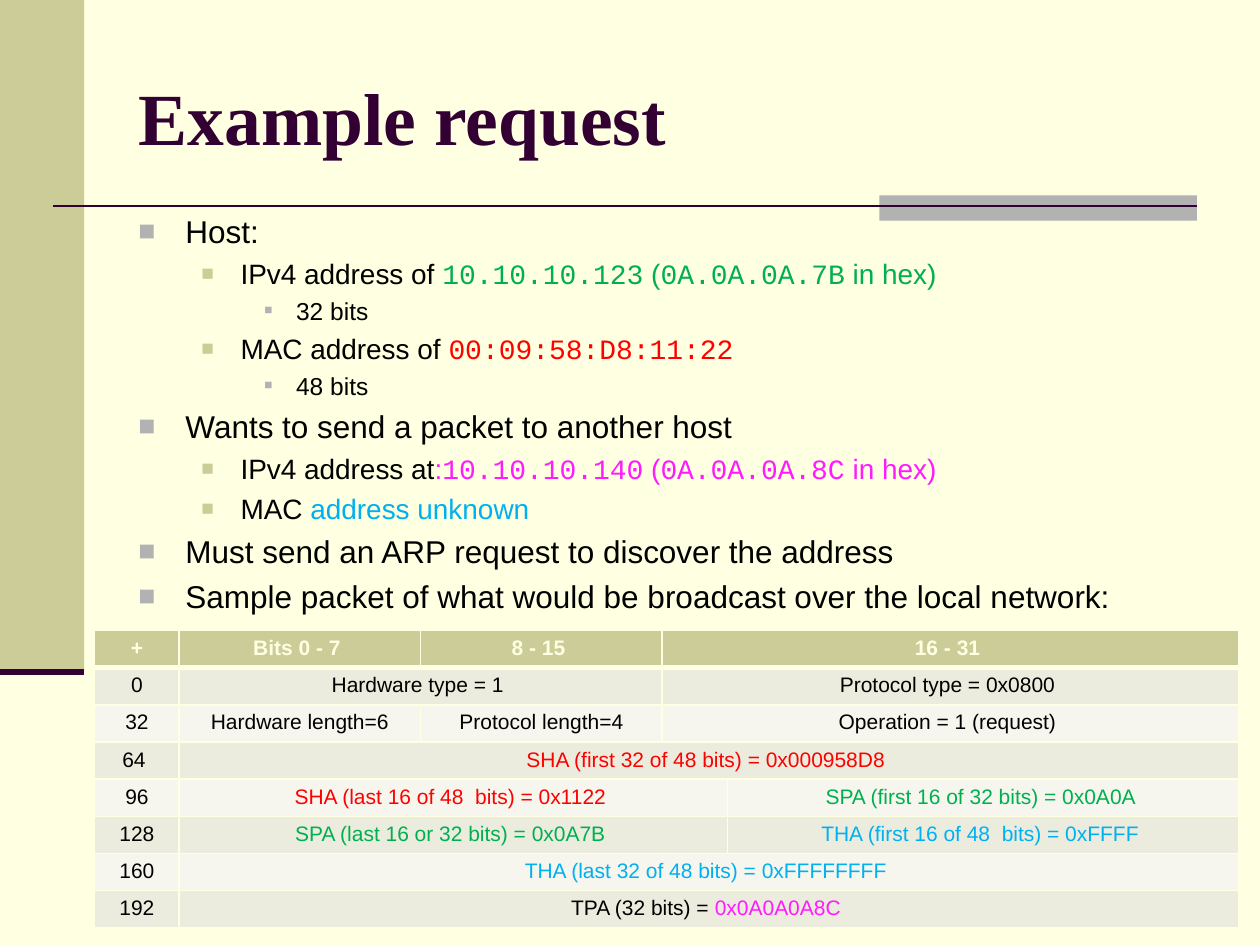
from dataclasses import dataclass

from lxml.etree import SubElement
from pptx import Presentation
from pptx.dml.color import RGBColor
from pptx.enum.shapes import MSO_CONNECTOR, MSO_SHAPE
from pptx.enum.text import MSO_ANCHOR, MSO_AUTO_SIZE, PP_ALIGN
from pptx.oxml import parse_xml
from pptx.oxml.ns import nsdecls, qn
from pptx.util import Cm, Pt


@dataclass(frozen=True)
class Theme:
    page: str = "FFFFE1"
    dark: str = "330033"
    olive: str = "CCCC99"
    gray: str = "B2B2B2"
    ink: str = "000000"
    green: str = "00B050"
    red: str = "FF0000"
    pink: str = "FF1AFF"
    blue: str = "00B0F0"
    bands: tuple = ("F6F6EF", "ECECDE")
    serif: str = "Times New Roman"
    sans: str = "Arial"
    mono: str = "Courier New"
    title: int = 42
    cell: int = 12


T = Theme()

# Per level: type size, left margin (cm), hanging indent (cm), bullet colour, bullet %
LEVELS = [
    (18, 0.95, 0.95, T.gray, 90),
    (16, 2.06, 0.79, T.olive, 75),
    (14, 3.18, 0.64, T.gray, 55),
]

# Level, then runs of (text, colour, font)
POINTS = [
    (0, [("Host:",)]),
    (1, [("IPv4 address of ",), ("10.10.10.123", T.green, T.mono), (" (", T.green),
         ("0A.0A.0A.7B", T.green, T.mono), (" in hex)", T.green)]),
    (2, [("32 bits",)]),
    (1, [("MAC address of ",), ("00:09:58:D8:11:22", T.red, T.mono)]),
    (2, [("48 bits",)]),
    (0, [("Wants to send a packet to another host",)]),
    (1, [("IPv4 address at",), (":", T.pink), ("10.10.10.140", T.pink, T.mono),
         (" (", T.pink), ("0A.0A.0A.8C", T.pink, T.mono), (" in hex)", T.pink)]),
    (1, [("MAC ",), ("address unknown", T.blue)]),
    (0, [("Must send an ARP request to discover the address",)]),
    (0, [("Sample packet of what would be broadcast over the local network:",)]),
]

# Rows of (column span, runs)
COLS = (1.7, 4.87, 4.87, 1.32, 10.3)
PACKET = [
    [(1, [("+", T.page)]), (1, [("Bits 0 - 7 ", T.page)]),
     (1, [("8 - 15 ", T.page)]), (2, [("16 - 31 ", T.page)])],
    [(1, [("0",)]), (2, [("Hardware type = 1 ",)]), (2, [("Protocol type = 0x0800 ",)])],
    [(1, [("32",)]), (1, [("Hardware length=6",)]), (1, [("Protocol length=4",)]),
     (2, [("Operation = 1 (request) ",)])],
    [(1, [("64 ",)]), (4, [("SHA (first 32 of 48 bits) = 0x000958D8 ", T.red)])],
    [(1, [("96",)]), (3, [("SHA (last 16 of 48  bits) = 0x1122 ", T.red)]),
     (1, [("SPA (first 16 of 32 bits) = 0x0A0A ", T.green)])],
    [(1, [("128",)]), (3, [("SPA (last 16 or 32 bits) = 0x0A7B ", T.green)]),
     (1, [("THA (first 16 of 48  bits) = 0xFFFF ", T.blue)])],
    [(1, [("160",)]), (4, [("THA (last 32 of 48 bits) = 0xFFFFFFFF ", T.blue)])],
    [(1, [("192",)]), (4, [("TPA (32 bits) = ",), ("0x0A0A0A8C ", T.pink)])],
]


def rgb(color):
    return RGBColor.from_string(color)


def style(run, size, color=T.ink, face=T.sans, bold=False):
    font = run.font
    font.size, font.name, font.bold = Pt(size), face, bold
    font.color.rgb = rgb(color)


def write(para, runs, size, bold=False):
    for text, *look in runs:
        run = para.add_run()
        run.text = text
        style(run, size, *look, bold=bold)


def block(slide, x, y, w, h, color):
    rect = slide.shapes.add_shape(MSO_SHAPE.RECTANGLE, Cm(x), Cm(y), Cm(w), Cm(h))
    rect.shadow.inherit = False
    rect.fill.solid()
    rect.fill.fore_color.rgb = rgb(color)
    rect.line.fill.background()


def rule(slide, x, y, w, width):
    line = slide.shapes.add_connector(MSO_CONNECTOR.STRAIGHT, Cm(x), Cm(y), Cm(x + w), Cm(y))
    line.line.color.rgb = rgb(T.dark)
    line.line.width = Pt(width)
    SubElement(line._element.spPr, qn("a:effectLst"))


def side(slide, x, y, w, h):
    # Side band closed by a dark rule
    block(slide, x, y, w, h, T.olive)
    rule(slide, x, y + h, w, 3.5)


def header(slide, x, y, w, h):
    # Title over a long rule with a gray tab at its right end
    tab, lead = 6.4, 1.47
    block(slide, x + w - tab, y + h, tab, 0.51, T.gray)
    rule(slide, x - lead, y + h + 0.21, w + lead, 1.5)
    title = slide.shapes.title
    title.left, title.top, title.width, title.height = Cm(x), Cm(y), Cm(w), Cm(h)
    frame = title.text_frame
    frame.text = "Example request"
    frame.auto_size = MSO_AUTO_SIZE.NONE
    frame.vertical_anchor = MSO_ANCHOR.MIDDLE
    para = frame.paragraphs[0]
    para.alignment = PP_ALIGN.LEFT
    style(para.runs[0], T.title, T.dark, T.serif, True)


def bullet(para, level):
    size, left, hang, color, scale = LEVELS[level]
    para.level = level
    props = para._p.get_or_add_pPr()
    props.set("marL", str(Cm(left)))
    props.set("indent", str(-Cm(hang)))
    SubElement(SubElement(props, qn("a:buClr")), qn("a:srgbClr"), val=color)
    SubElement(props, qn("a:buSzPct"), val=str(scale * 1000))
    SubElement(props, qn("a:buFont"), typeface=T.sans)
    SubElement(props, qn("a:buChar"), char="■")
    return size


def points(slide, x, y, w, h):
    # Bulleted scenario
    frame = slide.shapes.add_textbox(Cm(x), Cm(y), Cm(w), Cm(h)).text_frame
    frame.word_wrap = True
    for i, (level, runs) in enumerate(POINTS):
        para = frame.add_paragraph() if i else frame.paragraphs[0]
        size = bullet(para, level)
        para.space_before = Pt(round(size * 0.23, 1) if i else 0)
        write(para, runs, size)


def border(cell, head):
    props = cell._tc.get_or_add_tcPr()
    for i, edge in enumerate(("lnL", "lnR", "lnT", "lnB")):
        width = Pt(3 if head and edge == "lnB" else 1)
        props.insert(i, parse_xml(
            f'<a:{edge} {nsdecls("a")} w="{width}"><a:solidFill>'
            f'<a:srgbClr val="{T.page}"/></a:solidFill></a:{edge}>'))


def packet(slide, x, y, w, h):
    # Packet layout with merged fields
    rows = len(PACKET)
    table = slide.shapes.add_table(rows, len(COLS), Cm(x), Cm(y), Cm(w), Cm(h)).table
    table.first_row = table.horz_banding = False
    for col, width in zip(table.columns, COLS):
        col.width = Cm(width)
    for r, fields in enumerate(PACKET):
        table.rows[r].height = Cm(round(h / rows, 2))
        for c in range(len(COLS)):
            cell = table.cell(r, c)
            cell.fill.solid()
            cell.fill.fore_color.rgb = rgb(T.bands[r % 2] if r else T.olive)
            cell.margin_top = cell.margin_bottom = Cm(0.12)
            border(cell, r == 0)
        c = 0
        for span, runs in fields:
            cell = table.cell(r, c)
            if span > 1:
                cell.merge(table.cell(r, c + span - 1))
            para = cell.text_frame.paragraphs[0]
            para.alignment = PP_ALIGN.CENTER
            write(para, runs, T.cell, bold=r == 0)
            c += span


def main():
    deck = Presentation()
    deck.slide_width, deck.slide_height = Cm(25.4), Cm(19.05)
    slide = deck.slides.add_slide(deck.slide_layouts[5])
    slide.background.fill.solid()
    slide.background.fill.fore_color.rgb = rgb(T.page)
    side(slide, 0, 0, 1.7, 13.55)
    header(slide, 2.54, 0.76, 21.59, 3.18)
    points(slide, 2.54, 4.15, 21.59, 8.2)
    packet(slide, 1.91, 12.71, sum(COLS), 5.84)
    deck.save("out.pptx")


if __name__ == "__main__":
    main()
